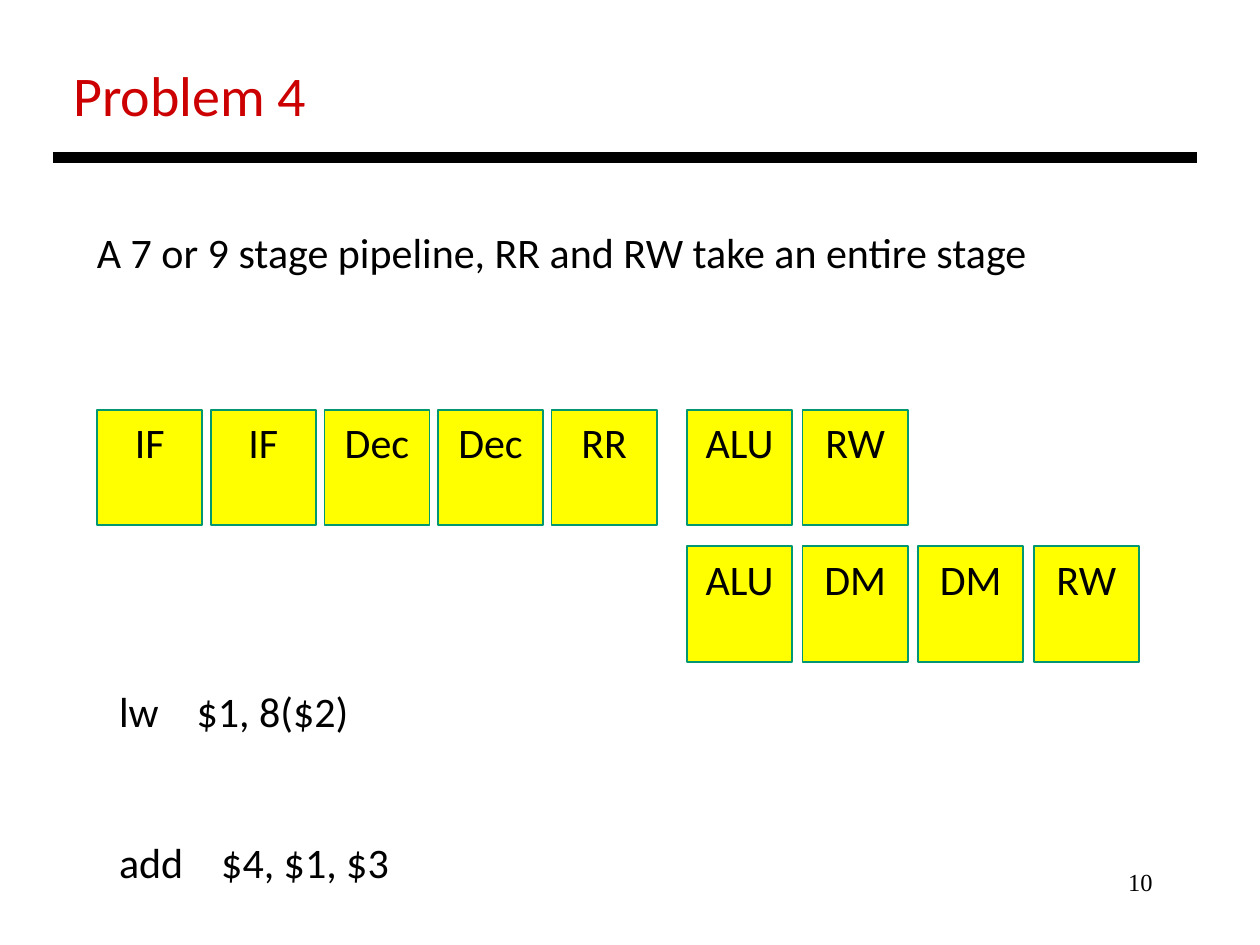
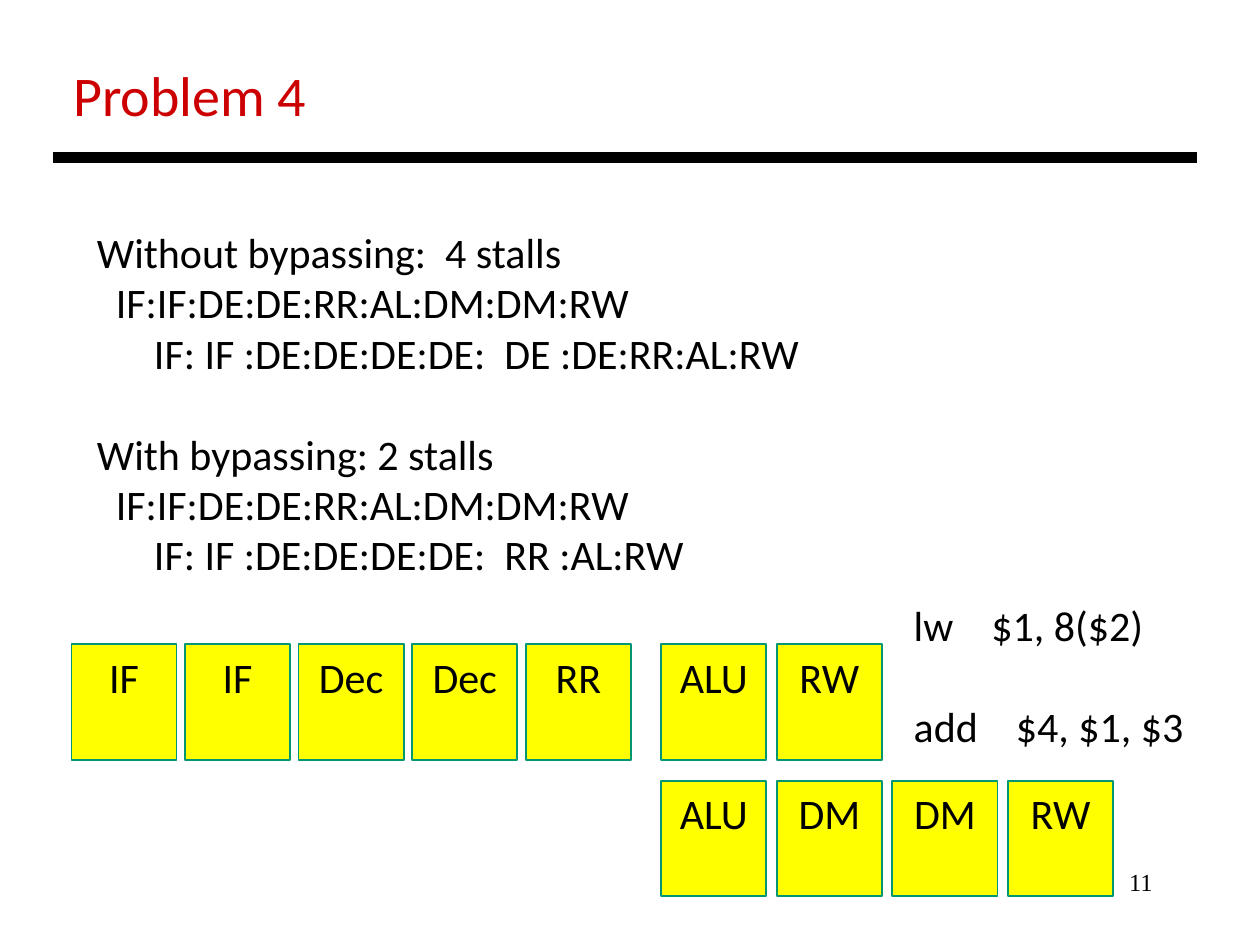
from dataclasses import dataclass

import lxml.etree
import pptx
import pptx.dml.color
import pptx.enum.shapes
import pptx.enum.text
import pptx.oxml.ns
import pptx.util

Cm, Pt = pptx.util.Cm, pptx.util.Pt
PP_ALIGN, MSO_ANCHOR = pptx.enum.text.PP_ALIGN, pptx.enum.text.MSO_ANCHOR
qn = pptx.oxml.ns.qn

COLORS = {"title": "CC0000", "text": "000000", "rule": "000000",
          "stage": "FFFF00", "stage_edge": "009771"}
FONT, NUMBER_FONT = "Calibri", "Times New Roman"
TEXT_SIZE = 24
BLANK_LINE = 28.8  # height in points of one line of body text
OPERAND_GAP = 16.3  # extra points between an opcode and its operands

# Pipeline geometry in cm
STAGE_W, STAGE_H = 2.12, 2.33
FRONT_STEP, BACK_STEP = 2.29, 2.33
BACK_OFFSET, ROW_STEP = 11.89, 2.75
FRONT_STAGES = ("IF", "IF", "Dec", "Dec", "RR")
BACK_ROWS = (("ALU", "RW"), ("ALU", "DM", "DM", "RW"))


@dataclass(frozen=True)
class Line:
    text: str
    operands: str = ""
    indent: float = 0  # cm
    before: float = 0  # points


@dataclass(frozen=True)
class Box:
    left: float
    top: float
    width: float
    height: float


@dataclass(frozen=True)
class ProblemSlide:
    number: int
    body: Box
    lines: tuple[Line, ...]
    pipeline: tuple[float, float]
    code: Box
    code_gap: float  # points between the two instructions


def rgb(name: str) -> pptx.dml.color.RGBColor:
    return pptx.dml.color.RGBColor.from_string(COLORS[name])


def place(sp, box: Box) -> None:
    sp.left, sp.top = Cm(box.left), Cm(box.top)
    sp.width, sp.height = Cm(box.width), Cm(box.height)


def write(tf, lines: tuple[Line, ...], size: float = TEXT_SIZE, color: str = "text",
          font: str = FONT, align=PP_ALIGN.LEFT) -> None:
    """Fill a text frame, one unbulleted paragraph per line."""
    tf.word_wrap = True
    tf.auto_size = pptx.enum.text.MSO_AUTO_SIZE.NONE
    tf.vertical_anchor = MSO_ANCHOR.TOP
    for i, line in enumerate(lines):
        p = tf.paragraphs[0] if i == 0 else tf.add_paragraph()
        p.alignment = align
        p.space_before, p.space_after = Pt(line.before), Pt(0)
        pPr = p._p.get_or_add_pPr()
        pPr.set("marL", str(Cm(line.indent)))
        pPr.set("indent", "0")
        lxml.etree.SubElement(pPr, qn("a:buNone"))
        # A widened space sets the operands apart from the opcode
        parts = (line.text, " ", line.operands) if line.operands else (line.text,)
        for part in parts:
            r = p.add_run()
            r.text = part
            r.font.size, r.font.name = Pt(size), font
            r.font.color.rgb = rgb(color)
            if part == " ":
                r.font._element.set("spc", str(round(OPERAND_GAP * 100)))


def add_text(s, box: Box, lines: tuple[Line, ...], **style) -> None:
    sp = s.shapes.add_textbox(0, 0, 0, 0)
    place(sp, box)
    write(sp.text_frame, lines, **style)


def add_rule(s) -> None:
    cx = s.shapes.add_connector(pptx.enum.shapes.MSO_CONNECTOR.STRAIGHT,
                                Cm(1.06), Cm(3.18), Cm(24.13), Cm(3.18))
    cx.line.color.rgb = rgb("rule")
    cx.line.width = Pt(6)
    lxml.etree.SubElement(cx._element.spPr, qn("a:effectLst"))


def add_stage(s, label: str, left: float, top: float) -> None:
    sp = s.shapes.add_shape(pptx.enum.shapes.MSO_SHAPE.RECTANGLE, 0, 0, 0, 0)
    place(sp, Box(left, top, STAGE_W, STAGE_H))
    sp.shadow.inherit = False
    sp.fill.solid()
    sp.fill.fore_color.rgb = rgb("stage")
    sp.line.color.rgb = rgb("stage_edge")
    sp.line.width = Pt(1)
    tf = sp.text_frame
    write(tf, (Line(label),), align=PP_ALIGN.CENTER)
    tf.margin_left = tf.margin_right = 0
    tf.margin_top = Cm(0.14)


def add_pipeline(s, left: float, top: float) -> None:
    for i, label in enumerate(FRONT_STAGES):
        add_stage(s, label, left + i * FRONT_STEP, top)
    for row, labels in enumerate(BACK_ROWS):
        for i, label in enumerate(labels):
            add_stage(s, label, left + BACK_OFFSET + i * BACK_STEP, top + row * ROW_STEP)


def add_problem(prs, spec: ProblemSlide) -> None:
    s = prs.slides.add_slide(prs.slide_layouts[1])
    title, body = s.placeholders[0], s.placeholders[1]

    # Title, rule and page number
    place(title, Box(1.22, 1.09, 22, 1.63))
    write(title.text_frame, (Line("Problem 4"),), size=32, color="title")
    add_rule(s)
    add_text(s, Box(18.21, 17.35, 5.28, 1.27), (Line(str(spec.number)),),
             size=14, font=NUMBER_FONT, align=PP_ALIGN.RIGHT)

    # Statement, stages and instructions
    place(body, spec.body)
    write(body.text_frame, spec.lines)
    add_pipeline(s, *spec.pipeline)
    add_text(s, spec.code, (Line("lw", "$1, 8($2)"),
                            Line("add", "$4, $1, $3", before=spec.code_gap)))


LOAD = Line("IF:IF:DE:DE:RR:AL:DM:DM:RW", indent=0.38)

SLIDES = (
    ProblemSlide(
        10, Box(1.7, 4.44, 21, 1.27),
        (Line("A 7 or 9 stage pipeline, RR and RW take an entire stage"),),
        pipeline=(1.96, 8.26), code=Box(2.15, 13.69, 6.8, 4.37), code_gap=2 * BLANK_LINE),
    ProblemSlide(
        11, Box(1.7, 4.44, 21, 7.44),
        (Line("Without bypassing:  4 stalls"), LOAD,
         Line("IF: IF :DE:DE:DE:DE:  DE :DE:RR:AL:RW", indent=1.15),
         Line("With bypassing: 2 stalls", before=BLANK_LINE), LOAD,
         Line("IF: IF :DE:DE:DE:DE:  RR :AL:RW", indent=1.15)),
        pipeline=(1.44, 12.99), code=Box(18.17, 11.96, 6.8, 3.33), code_gap=BLANK_LINE),
)


def main() -> None:
    prs = pptx.Presentation()
    prs.slide_width, prs.slide_height = Cm(25.4), Cm(19.05)
    for spec in SLIDES:
        add_problem(prs, spec)
    prs.save("out.pptx")


if __name__ == "__main__":
    main()
